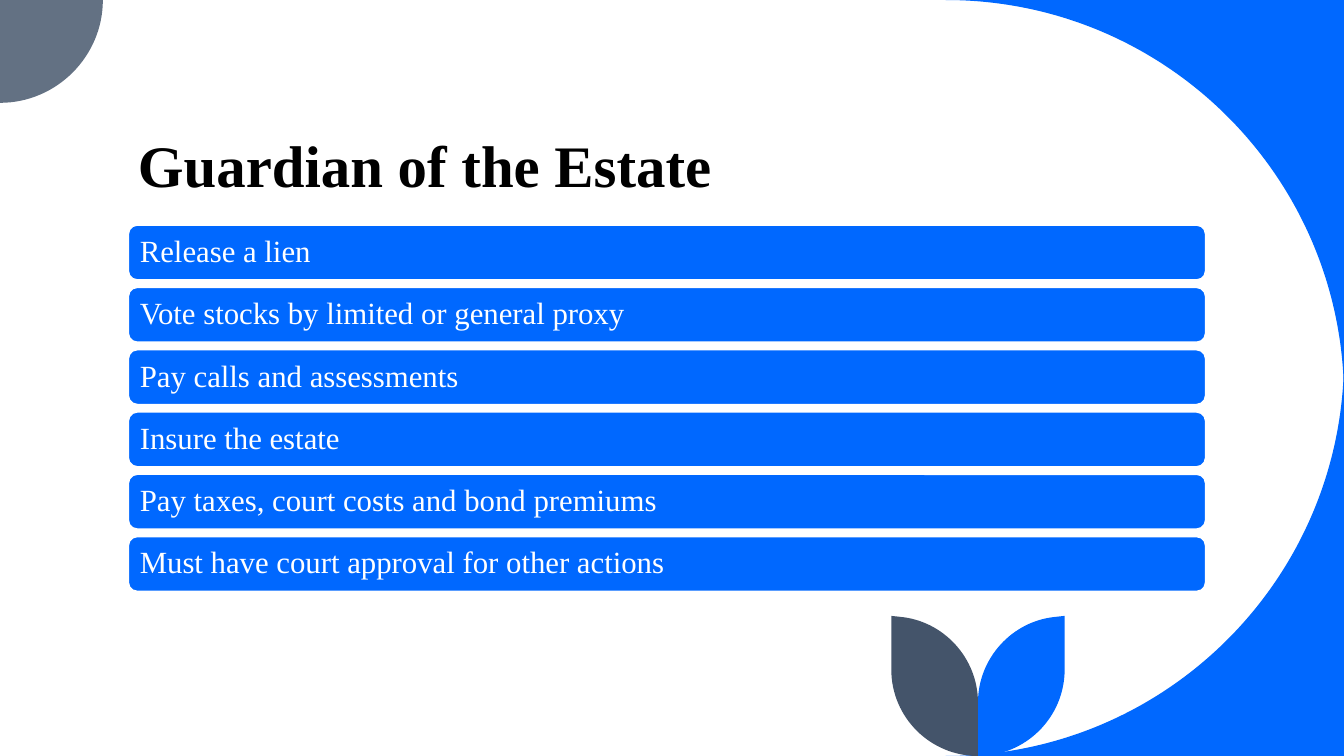
from lxml import etree
from pptx import Presentation, util as u
from pptx.dml.color import RGBColor
from pptx.enum import shapes, text
from pptx.oxml import ns

COLORS = {"blue": "0068FF", "slate": "637183", "navy": "44546A", "white": "FFFFFF", "black": "000000"}

presentation = Presentation()
presentation.slide_width = u.Inches(13.33)
presentation.slide_height = u.Inches(7.5)
slide = presentation.slides.add_slide(presentation.slide_layouts[6])


def write_text(shape, words, size, color, bold=False, spacing=1.0, anchor=text.MSO_ANCHOR.MIDDLE, inset=0.1):
    frame = shape.text_frame
    frame.word_wrap = True
    frame.vertical_anchor = anchor
    frame.margin_left = frame.margin_right = u.Inches(inset)
    frame.margin_top = frame.margin_bottom = u.Inches(0.05)
    paragraph = frame.paragraphs[0]
    paragraph.alignment = text.PP_ALIGN.LEFT
    paragraph.line_spacing = spacing
    run = paragraph.add_run()
    run.text = words
    run.font.name = "Times New Roman"
    run.font.size = u.Pt(size)
    run.font.bold = bold
    run.font.color.rgb = RGBColor.from_string(COLORS[color])


def draw_outline(segments, color):
    corners = [(u.Inches(segment[-2]), u.Inches(segment[-1])) for segment in segments]
    builder = slide.shapes.build_freeform(*corners[0])
    builder.add_line_segments(corners[1:], close=True)
    shape = builder.convert_to_shape()
    lines = list(shape._element.iter(ns.qn("a:lnTo")))
    for line, segment in zip(lines, segments[1:]):
        if len(segment) == 6:
            line.tag = ns.qn("a:cubicBezTo")
            for index in (0, 2):
                control = etree.Element(ns.qn("a:pt"))
                control.set("x", str(u.Inches(segment[index]) - shape.left))
                control.set("y", str(u.Inches(segment[index + 1]) - shape.top))
                line.insert(index // 2, control)
    shape.shadow.inherit = False
    shape.fill.solid()
    shape.fill.fore_color.rgb = RGBColor.from_string(COLORS[color])
    shape.line.fill.background()


for edge, sign in ((0, 1), (7.5, -1)):
    draw_outline([(13.33, edge), (9.38, edge),
                  (11.57, edge, 13.33, edge + sign * 1.77, 13.33, edge + sign * 3.95)], "blue")

draw_outline([(0, 0), (1.02, 0), (1.02, 0.56, 0.56, 1.02, 0, 1.02)], "slate")

stem = 9.7
for side, color in ((1, "blue"), (-1, "navy")):
    tip = stem + side * 0.86
    draw_outline([(tip, 6.11), (tip, 6.64),
                  (tip, 7.12, stem + side * 0.47, 7.5, stem, 7.5), (stem, 6.97),
                  (stem, 6.53, stem + side * 0.34, 6.16, stem + side * 0.77, 6.12)], color)

title = slide.shapes.add_textbox(u.Inches(1.27), u.Inches(0.11), u.Inches(10.69), u.Inches(1.91))
write_text(title, "Guardian of the Estate", 42, "black", bold=True, spacing=0.8, anchor=text.MSO_ANCHOR.BOTTOM)

duties = [
    "Release a lien",
    "Vote stocks by limited or general proxy",
    "Pay calls and assessments",
    "Insure the estate",
    "Pay taxes, court costs and bond premiums",
    "Must have court approval for other actions",
]
first_top, last_top = 2.23, 5.32
pitch = (last_top - first_top) / (len(duties) - 1)
for row, duty in enumerate(duties):
    bar = slide.shapes.add_shape(shapes.MSO_SHAPE.ROUNDED_RECTANGLE, u.Inches(1.27),
                                 u.Inches(first_top + row * pitch), u.Inches(10.69), u.Inches(0.55))
    bar.shadow.inherit = False
    bar.fill.solid()
    bar.fill.fore_color.rgb = RGBColor.from_string(COLORS["blue"])
    bar.line.color.rgb = RGBColor.from_string(COLORS["white"])
    bar.line.width = u.Pt(1.5)
    write_text(bar, duty, 22, "white", spacing=0.9, inset=0.09)

presentation.save("out.pptx")
